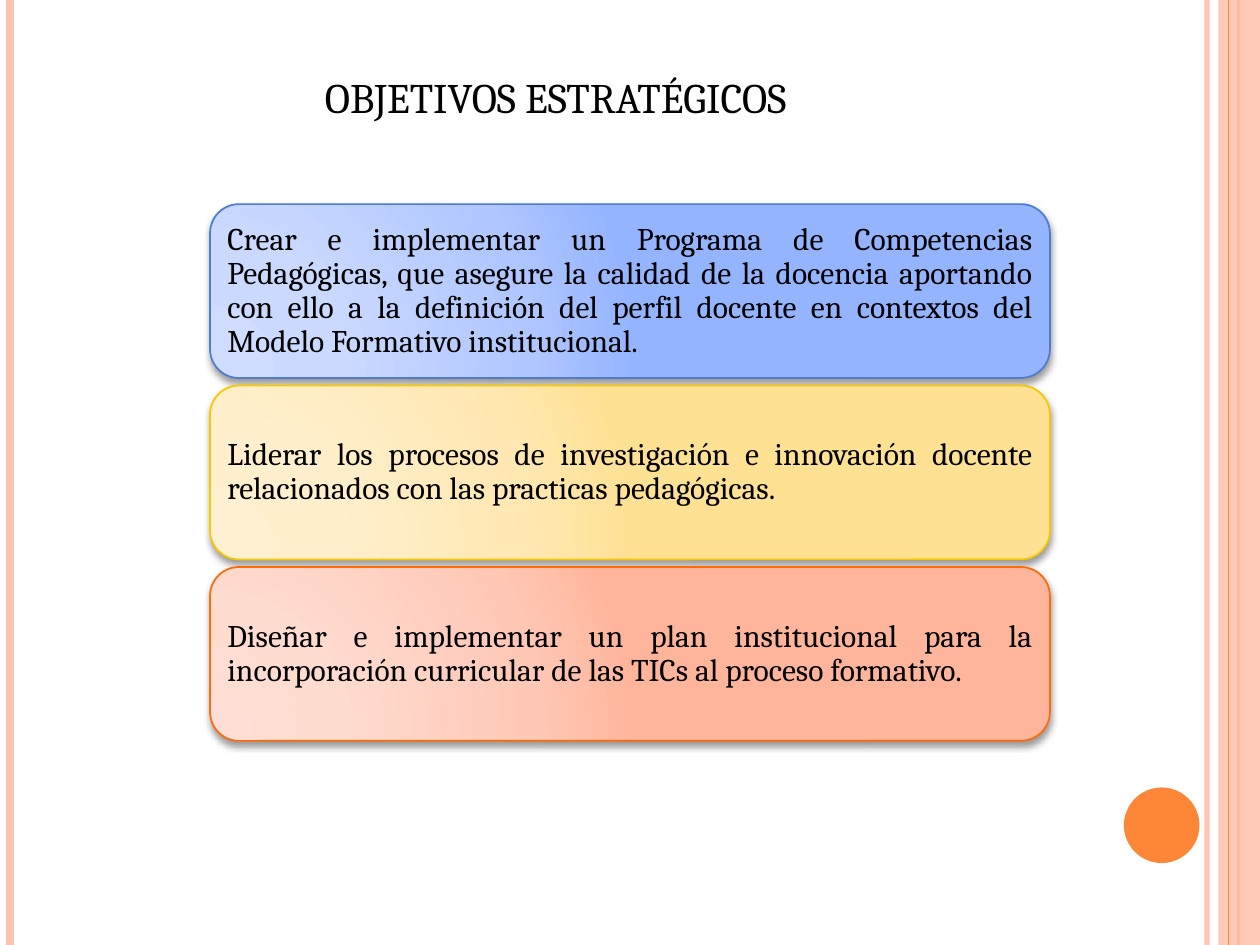
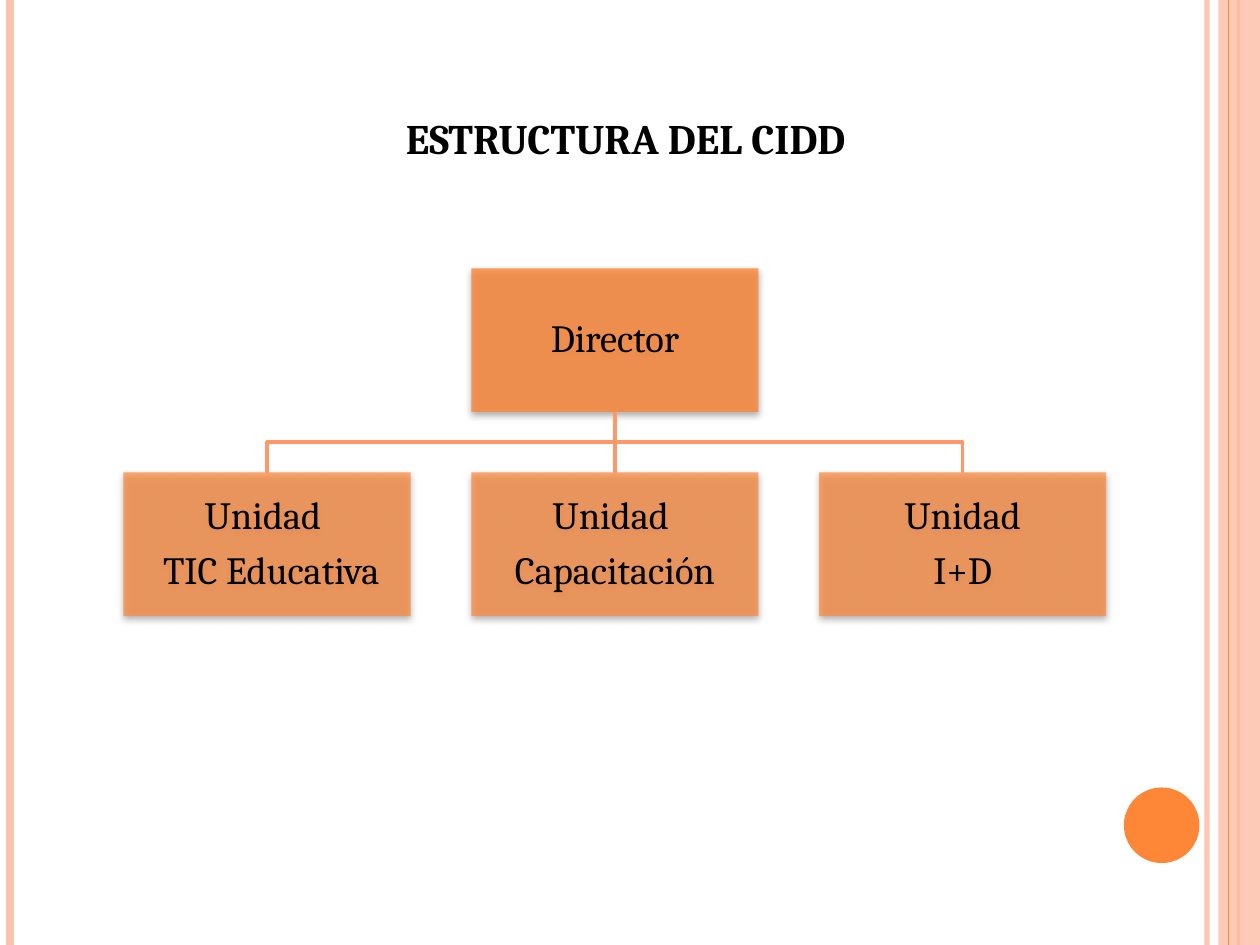
from lxml.etree import SubElement
from pptx import Presentation
from pptx.dml.color import RGBColor
from pptx.enum.shapes import MSO_CONNECTOR as Connector, MSO_SHAPE as Shape
from pptx.enum.text import MSO_ANCHOR as Anchor, PP_ALIGN as Align
from pptx.oxml import parse_xml
from pptx.oxml.ns import nsdecls, qn
from pptx.util import Inches, Pt

FONT = "Cambria"
BLACK, PEACH, ORANGE, BRANCH = "000000", "FEC3AE", "FE8637", "FE9868"
WIDTH, HEIGHT = 10, 7.5


def color(hex_string):
    return RGBColor.from_string(hex_string)


def write(shape, lines, size, align, bold=False):
    frame = shape.text_frame
    frame.word_wrap = True
    frame.text = "\n".join(lines)
    for paragraph in frame.paragraphs:
        paragraph.alignment = align
        font = paragraph.runs[0].font
        font.name, font.size, font.bold = FONT, Pt(size), bold
        font.color.rgb = color(BLACK)


presentation = Presentation()
presentation.slide_width, presentation.slide_height = Inches(WIDTH), Inches(HEIGHT)

connectors = []   # lines that must lose their shadow
translucent = []  # (shape, opacity in percent)
boxes = []        # (shape, lines, size, alignment, inset)

# Shared frame: side lines, right band, round badge and title
side_lines = [(9.58, PEACH, 3), (0.08, PEACH, 4.5), (9.83, ORANGE, 1.5), (9.75, ORANGE, 0.75)]
titles = [
    ("OBJETIVOS ESTRATÉGICOS", 2.48, 0.52, 5.28, Align.LEFT, False),
    ("ESTRUCTURA DEL CIDD", 2.09, 0.84, 5.75, Align.CENTER, True),
]
slides = []
for title, left, top, width, align, bold in titles:
    slide = presentation.slides.add_slide(presentation.slide_layouts[6])
    slides.append(slide)
    for x, line_color, weight in side_lines:
        if x == 9.75:  # the band lies under the last line only
            band = slide.shapes.add_shape(
                Shape.RECTANGLE, Inches(9.67), 0, Inches(0.33), Inches(HEIGHT))
            band.fill.solid()
            band.fill.fore_color.rgb = color(PEACH)
            band.line.fill.background()
            band.shadow.inherit = False
            translucent.append((band, 87))
        side_line = slide.shapes.add_connector(
            Connector.STRAIGHT, Inches(x), 0, Inches(x), Inches(HEIGHT))
        side_line.line.color.rgb = color(line_color)
        side_line.line.width = Pt(weight)
        connectors.append(side_line)
        if x == 9.58:
            translucent.append((side_line, 93))
    badge = slide.shapes.add_shape(
        Shape.OVAL, Inches(8.92), Inches(6.25), Inches(0.6), Inches(0.6))
    badge.fill.solid()
    badge.fill.fore_color.rgb = color(ORANGE)
    badge.line.fill.background()
    badge.shadow.inherit = False
    heading = slide.shapes.add_textbox(
        Inches(left), Inches(top), Inches(width), Inches(0.5))
    write(heading, [title], 24, align, bold)

goals_slide, structure_slide = slides

# Strategic goals: three stacked cards
card_height, card_step = 1.38, 1.44
goals = [
    ("Crear e implementar un Programa de Competencias Pedagógicas, que asegure la calidad "
     "de la docencia aportando con ello a la definición del perfil docente en contextos "
     "del Modelo Formativo institucional.",
     "4F7CCF", ["CFDCFF", "CBD9FF", "AFC6FF", "95B4FF"]),
    ("Liderar los procesos de investigación e innovación docente relacionados con las "
     "practicas pedagógicas.",
     "F8C700", ["FFF0D1", "FFEFCC", "FFE7B1", "FFE193"]),
    ("Diseñar e implementar un plan institucional para la incorporación curricular de las "
     "TICs al proceso formativo.",
     "FF6B0A", ["FFDED5", "FFDBD0", "FFC8B6", "FFB59B"]),
]
for row, (goal, border, shades) in enumerate(goals):
    card = goals_slide.shapes.add_shape(
        Shape.ROUNDED_RECTANGLE, Inches(WIDTH / 6), Inches(1.62 + row * card_step),
        Inches(WIDTH * 2 / 3), Inches(card_height))
    stops = "".join(
        f'<a:gs pos="{position * 1000}"><a:srgbClr val="{shade}"/></a:gs>'
        for position, shade in zip((0, 30, 75, 100), shades))
    gradient = parse_xml(
        f'<a:gradFill {nsdecls("a")} rotWithShape="1"><a:gsLst>{stops}</a:gsLst>'
        '<a:path path="circle"><a:fillToRect l="5000" t="100000" r="120000" b="10000"/>'
        '</a:path></a:gradFill>')
    card._element.spPr.find(qn("a:prstGeom")).addnext(gradient)
    card.line.color.rgb = color(border)
    card.line.width = Pt(1)
    boxes.append((card, [goal], 18, Align.JUSTIFY, 0.07))

# Organisation chart: director above three units
box_width, box_height = 2.28, 1.14
column_step, first_column = 2.76, 0.98
director_top, units_top = 2.13, 3.75
positions = [
    (["Director"], 1, director_top, 80),
    (["Unidad ", " TIC Educativa"], 0, units_top, 70),
    (["Unidad ", "Capacitación"], 1, units_top, 70),
    (["Unidad", "I+D"], 2, units_top, 70),
]
chart_boxes = []
for lines, column, top, opacity in positions:
    box = structure_slide.shapes.add_shape(
        Shape.RECTANGLE, Inches(first_column + column * column_step), Inches(top),
        Inches(box_width), Inches(box_height))
    box.fill.solid()
    box.fill.fore_color.rgb = color(ORANGE)
    box.line.fill.background()
    translucent.append((box, opacity))
    boxes.append((box, lines, 22, Align.CENTER, 0.02))
    chart_boxes.append(box)

# Branches: a straight one to the middle unit, elbows to the outer ones
director, left_unit, middle_unit, right_unit = chart_boxes
trunk = structure_slide.shapes.add_connector(Connector.STRAIGHT, 0, 0, 0, 0)
trunk.begin_connect(director, 2)
trunk.end_connect(middle_unit, 0)
connectors.append(trunk)
branches = [trunk]
center_x = director.left + director.width // 2
start_y = director.top + director.height
bend_y = (start_y + left_unit.top) // 2
for unit in (left_unit, right_unit):
    unit_x = unit.left + unit.width // 2
    builder = structure_slide.shapes.build_freeform(center_x, start_y)
    builder.add_line_segments(
        [(center_x, bend_y), (unit_x, bend_y), (unit_x, unit.top)], close=False)
    elbow = builder.convert_to_shape()
    elbow.fill.background()
    elbow.shadow.inherit = False
    branches.append(elbow)
for branch in branches:
    branch.line.color.rgb = color(BRANCH)
    branch.line.width = Pt(2)

# Text and soft shadow of every box
for box, lines, size, align, inset in boxes:
    write(box, lines, size, align)
    frame = box.text_frame
    frame.vertical_anchor = Anchor.MIDDLE
    frame.margin_left = frame.margin_right = Inches(inset)
    frame.margin_top = frame.margin_bottom = Inches(inset)
    for paragraph in frame.paragraphs:
        paragraph.line_spacing = 0.9
        paragraph.space_after = Pt(size * 0.35)
    box.shadow.inherit = False
    box._element.spPr.find(qn("a:effectLst")).append(parse_xml(
        f'<a:outerShdw {nsdecls("a")} blurRad="{Pt(4)}" dist="{Pt(2)}" dir="5400000" '
        f'rotWithShape="0"><a:srgbClr val="{BLACK}"><a:alpha val="40000"/></a:srgbClr>'
        '</a:outerShdw>'))

# Transparency and plain connectors
for shape, opacity in translucent:
    paint = shape._element.spPr.xpath(".//a:srgbClr")[0]
    SubElement(paint, qn("a:alpha")).set("val", str(opacity * 1000))
for connector in connectors:
    SubElement(connector._element.spPr, qn("a:effectLst"))

presentation.save("out.pptx")
